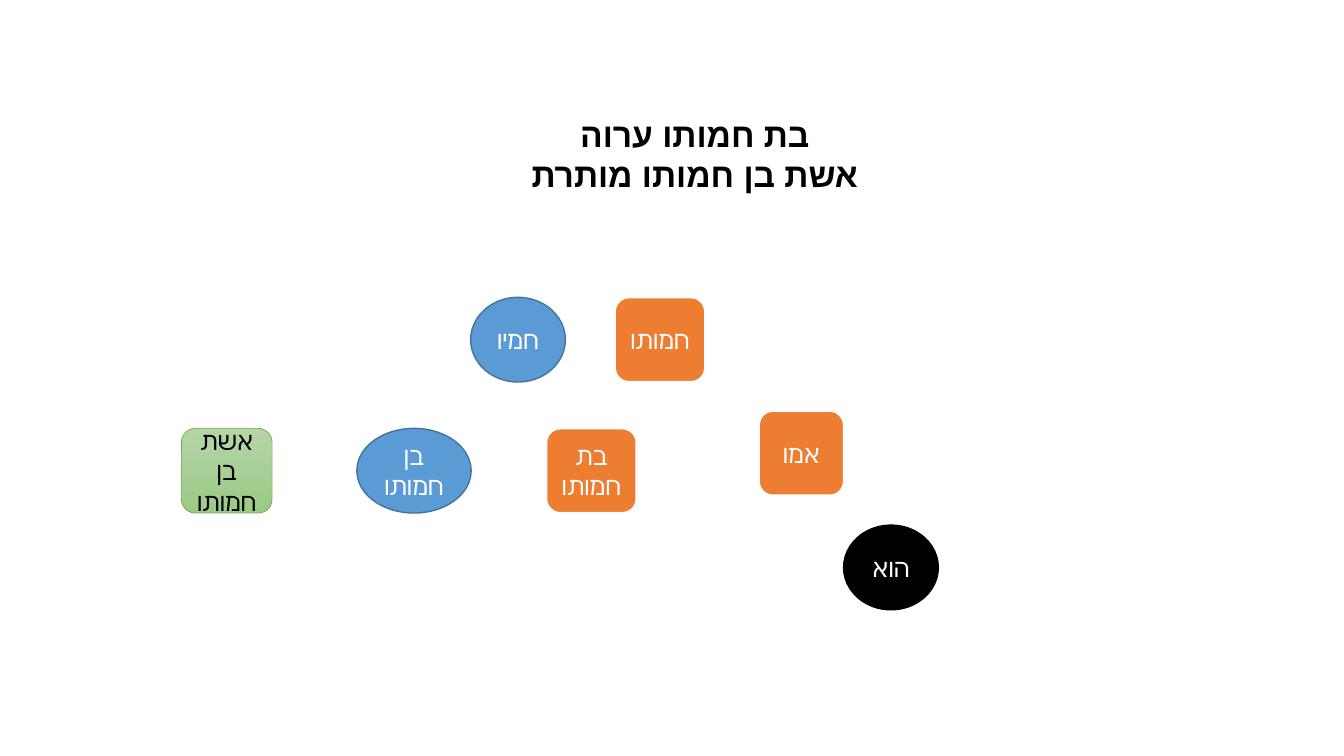
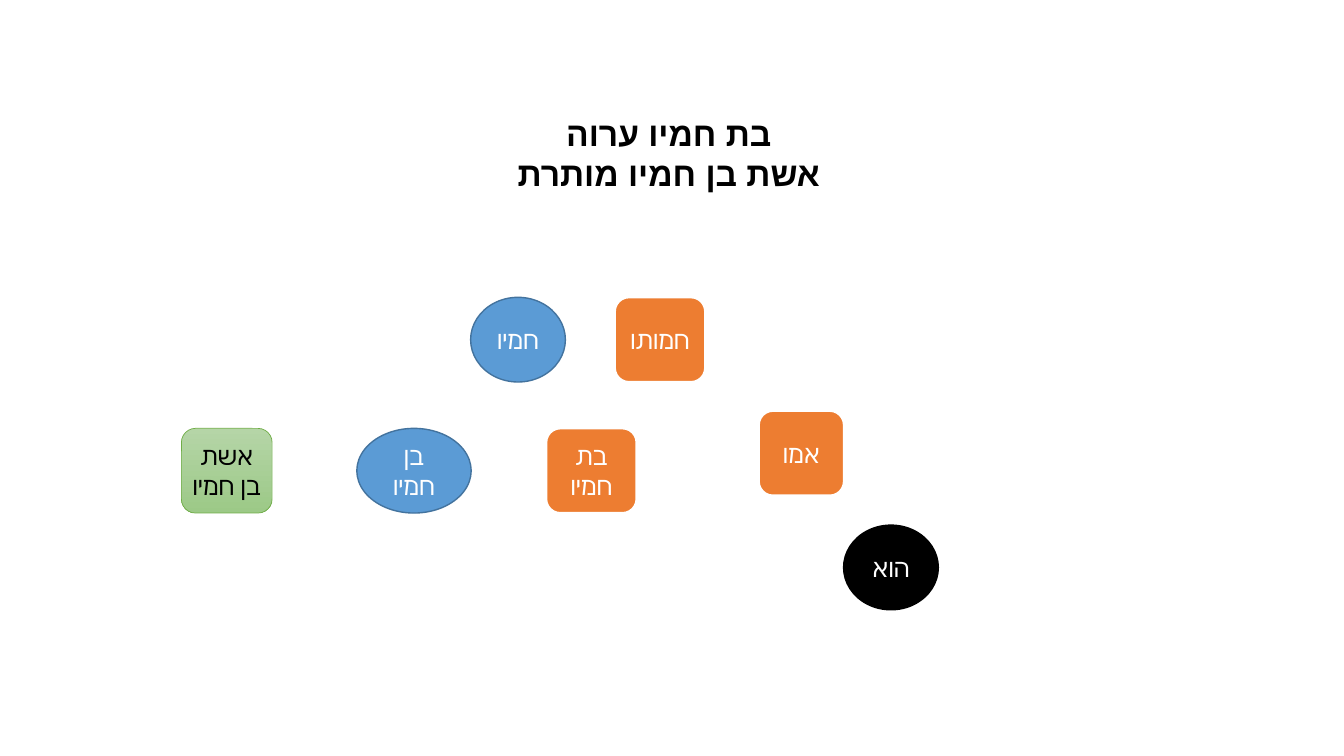
import pptx
import pptx.dml.color
import pptx.enum.lang
import pptx.enum.shapes
import pptx.enum.text
import pptx.oxml
import pptx.oxml.ns
import pptx.util

Pt = pptx.util.Pt
RGBColor = pptx.dml.color.RGBColor
SHAPES = pptx.enum.shapes.MSO_SHAPE
ALIGN = pptx.enum.text.PP_ALIGN
ANCHOR = pptx.enum.text.MSO_ANCHOR
AUTO_SIZE = pptx.enum.text.MSO_AUTO_SIZE
HEBREW = pptx.enum.lang.MSO_LANGUAGE_ID.HEBREW

BLACK = RGBColor(0x00, 0x00, 0x00)
WHITE = RGBColor(0xFF, 0xFF, 0xFF)
ORANGE = RGBColor(0xED, 0x7D, 0x31)
BLUE = RGBColor(0x5B, 0x9B, 0xD5)
DARK_BLUE = RGBColor(0x43, 0x73, 0x9E)
GREEN = RGBColor(0x70, 0xAD, 0x47)
LIGHT_GREEN = RGBColor(0xB5, 0xD5, 0xA7)
MID_GREEN = RGBColor(0x9C, 0xC9, 0x87)
FONT = "Arial"
TITLE_FORMAT = {"name": FONT, "size": Pt(24), "bold": True, "language_id": HEBREW}
PERSON_FORMAT = {"name": FONT, "size": Pt(18), "language_id": HEBREW}

# Content: the relative each slide is about, and the title box (left, top, width)
SLIDES = [
    {"relative": "חמותו", "title_box": (272.8, 77.8, 447)},
    {"relative": "חמיו", "title_box": (310, 77, 335.5)},
]
TITLE_LINES = ["בת {relative} ערוה", "אשת בן {relative} מותרת"]
TITLE_HEIGHT = 65.5

# Family members: text, role, left, top, width
PEOPLE = [
    ("הוא", "self", 602.6, 375.1, 67.7),
    ("אמו", "woman", 542, 293.5, 60.8),
    ("חמותו", "woman", 439.2, 212.4, 64.5),
    ("חמיו", "man", 336.2, 212.4, 67.7),
    ("בת {relative}", "woman", 390.2, 306, 64.5),
    ("בן {relative}", "man", 254.9, 306, 81.7),
    ("אשת בן {relative}", "wife", 129.6, 306, 64.8),
]
PERSON_HEIGHT = 60.5
PERSON_MARGIN = 5

# Role formats: two fill colours make a vertical gradient
ROLES = {
    "self": {"shape": SHAPES.OVAL, "fill": [BLACK], "line": BLACK, "width": 1, "text": WHITE},
    "man": {"shape": SHAPES.OVAL, "fill": [BLUE], "line": DARK_BLUE, "width": 1, "text": WHITE},
    "woman": {"shape": SHAPES.ROUNDED_RECTANGLE, "fill": [ORANGE], "line": WHITE,
              "width": 1.5, "text": WHITE},
    "wife": {"shape": SHAPES.ROUNDED_RECTANGLE, "fill": [LIGHT_GREEN, MID_GREEN],
             "line": GREEN, "width": 0.5, "text": BLACK},
}


def write_lines(text_frame, lines, color, font_format):
    """Write centred right-to-left paragraphs and return their runs."""
    text_frame.word_wrap = True
    runs = []
    for index, line in enumerate(lines):
        paragraph = text_frame.paragraphs[0] if index == 0 else text_frame.add_paragraph()
        paragraph.alignment = ALIGN.CENTER
        paragraph._p.get_or_add_pPr().set("rtl", "1")
        run = paragraph.add_run()
        run.text = line
        for name, value in font_format.items():
            setattr(run.font, name, value)
        run.font.color.rgb = color
        runs.append(run)
    return runs


def add_title(slide, box, relative):
    left, top, width = box
    text_box = slide.shapes.add_textbox(Pt(left), Pt(top), Pt(width), Pt(TITLE_HEIGHT))
    lines = [line.format(relative=relative) for line in TITLE_LINES]
    for run in write_lines(text_box.text_frame, lines, BLACK, TITLE_FORMAT):
        # Hebrew takes its typeface from the complex-script font
        complex_font = pptx.oxml.parse_xml(
            f'<a:cs {pptx.oxml.ns.nsdecls("a")} typeface="{FONT}"/>')
        run._r.get_or_add_rPr().append(complex_font)
    text_box.text_frame.auto_size = AUTO_SIZE.SHAPE_TO_FIT_TEXT


def add_person(slide, text, role, left, top, width):
    style = ROLES[role]
    shape = slide.shapes.add_shape(
        style["shape"], Pt(left), Pt(top), Pt(width), Pt(PERSON_HEIGHT))
    shape.shadow.inherit = False
    if len(style["fill"]) > 1:
        shape.fill.gradient()
        shape.fill.gradient_angle = 270
        for stop, color in zip(shape.fill.gradient_stops, style["fill"]):
            stop.color.rgb = color
    else:
        shape.fill.solid()
        shape.fill.fore_color.rgb = style["fill"][0]
    shape.line.color.rgb = style["line"]
    shape.line.width = Pt(style["width"])
    frame_format = {"vertical_anchor": ANCHOR.MIDDLE,
                    "margin_left": Pt(PERSON_MARGIN), "margin_right": Pt(PERSON_MARGIN)}
    for name, value in frame_format.items():
        setattr(shape.text_frame, name, value)
    write_lines(shape.text_frame, [text], style["text"], PERSON_FORMAT)


def main():
    presentation = pptx.Presentation()
    presentation.slide_width = Pt(960)
    presentation.slide_height = Pt(540)
    for content in SLIDES:
        slide = presentation.slides.add_slide(presentation.slide_layouts[6])
        relative = content["relative"]
        add_title(slide, content["title_box"], relative)
        for text, *placement in PEOPLE:
            add_person(slide, text.format(relative=relative), *placement)
    presentation.save("out.pptx")


if __name__ == "__main__":
    main()
